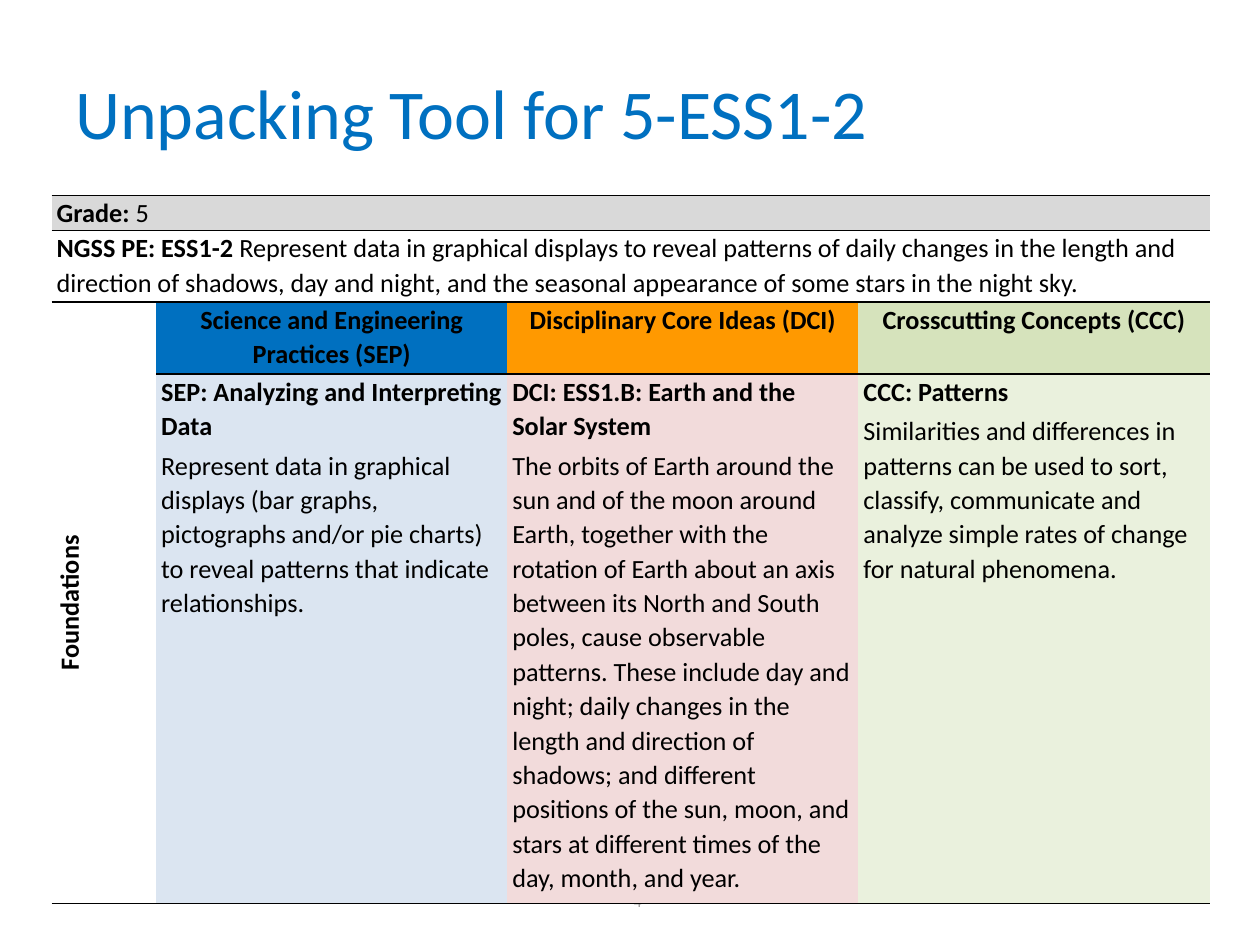
from dataclasses import dataclass

from lxml.etree import SubElement
from pptx import Presentation
from pptx.dml.color import RGBColor
from pptx.enum.text import MSO_ANCHOR, PP_ALIGN
from pptx.oxml import parse_xml
from pptx.oxml.ns import nsdecls, qn
from pptx.util import Inches, Pt


@dataclass(frozen=True)
class Theme:
    font: str = "Calibri"
    title_size: int = 40
    body_size: int = 15
    number_size: int = 9
    title: str = "0070C0"
    ink: str = "000000"
    muted: str = "8C8C8C"
    grade: str = "D9D9D9"
    no_style: str = "{2D5ABB26-0587-4C30-8999-92F81FD0307C}"


THEME = Theme()
WIDTH, HEIGHT = 10, 7.5
ROWS = (0.28, 0.57, 0.57, 4.21)
LABEL_WIDTH = 0.83

# Heading, heading fill, body title, body text, body fill
DIMENSIONS = (
    ("Science and Engineering Practices (SEP)", "0070C0",
     "SEP: Analyzing and Interpreting Data",
     "Represent data in graphical displays (bar graphs, pictographs and/or pie "
     "charts) to reveal patterns that indicate relationships.", "DBE5F1"),
    ("Disciplinary Core Ideas (DCI)", "FF9900",
     "DCI: ESS1.B: Earth and the Solar System",
     "The orbits of Earth around the sun and of the moon around Earth, together "
     "with the rotation of Earth about an axis between its North and South poles, "
     "cause observable patterns. These include day and night; daily changes in "
     "the length and direction of shadows; and different positions of the sun, "
     "moon, and stars at different times of the day, month, and year.", "F2DBDB"),
    ("Crosscutting Concepts (CCC)", "D6E3BC",
     "CCC: Patterns",
     "Similarities and differences in patterns can be used to sort, classify, "
     "communicate and analyze simple rates of change for natural phenomena.",
     "EAF1DD"),
)
PERFORMANCE = ("Represent data in graphical displays to reveal patterns of daily "
               "changes in the length and direction of shadows, day and night, and "
               "the seasonal appearance of some stars in the night sky.")


def write(tf, paragraphs, size=THEME.body_size, color=THEME.ink,
          align=PP_ALIGN.LEFT, spacing=1.07, after=0):
    """Fill a text frame; each paragraph is a list of (text, bold) runs."""
    for i, runs in enumerate(paragraphs):
        p = tf.add_paragraph() if i else tf.paragraphs[0]
        p.alignment, p.line_spacing, p.space_after = align, spacing, Pt(after)
        for text, bold in runs:
            r = p.add_run()
            r.text = text
            r.font.name, r.font.size, r.font.bold = THEME.font, Pt(size), bold
            r.font.color.rgb = RGBColor.from_string(color)


def add_text(slide, box, text, **fmt):
    sp = slide.shapes.add_textbox(*map(Inches, box))
    tf = sp.text_frame
    tf.word_wrap = True
    tf.vertical_anchor = MSO_ANCHOR.MIDDLE
    write(tf, [[(text, False)]], **fmt)


def rule_cell(cell):
    """Draw a thin line above and below the cell and none at its sides."""
    tc_pr = cell._tc.get_or_add_tcPr()
    for i, side in enumerate(("lnL", "lnR", "lnT", "lnB")):
        ln = parse_xml(f'<a:{side} {nsdecls("a")} w="{Pt(1)}"/>')
        if side in ("lnT", "lnB"):
            SubElement(SubElement(ln, qn("a:solidFill")), qn("a:srgbClr"), val=THEME.ink)
        else:
            SubElement(ln, qn("a:noFill"))
        tc_pr.insert(i, ln)


def fill_cell(cell, paragraphs, fill=None, **fmt):
    if fill:
        cell.fill.solid()
        cell.fill.fore_color.rgb = RGBColor.from_string(fill)
    else:
        cell.fill.background()
    write(cell.text_frame, paragraphs, **fmt)


def add_unpacking_table(slide, box):
    left, top, width, height = box
    frame = slide.shapes.add_table(len(ROWS), 1 + len(DIMENSIONS), *map(Inches, box))
    table = frame.table
    table._tbl.tblPr.find(qn("a:tableStyleId")).text = THEME.no_style
    table.first_row = table.horz_banding = False
    for row, share in zip(table.rows, ROWS):
        row.height = Inches(height * share / sum(ROWS))
    for i, col in enumerate(table.columns):
        col.width = Inches((width - LABEL_WIDTH) / len(DIMENSIONS) if i else LABEL_WIDTH)

    for cell in table.iter_cells():
        cell.margin_left = cell.margin_right = Inches(0.04)
        cell.margin_top = cell.margin_bottom = 0
        rule_cell(cell)

    last = len(DIMENSIONS)
    for r in (0, 1):
        table.cell(r, 0).merge(table.cell(r, last))
    table.cell(2, 0).merge(table.cell(3, 0))

    fill_cell(table.cell(0, 0), [[("Grade: ", True), ("5", False)]], THEME.grade)
    fill_cell(table.cell(1, 0), [[("NGSS PE: ESS1-2 ", True), (PERFORMANCE, False)]])
    label = table.cell(2, 0)
    fill_cell(label, [[("Foundations", True)]], align=PP_ALIGN.CENTER)
    label._tc.get_or_add_tcPr().set("vert", "vert270")

    for c, (heading, dark, title, body, light) in enumerate(DIMENSIONS, 1):
        fill_cell(table.cell(2, c), [[(heading, True)]], dark, align=PP_ALIGN.CENTER)
        fill_cell(table.cell(3, c), [[(title, True)], [(body, False)]], light, after=3)


def main():
    prs = Presentation()
    prs.slide_width, prs.slide_height = Inches(WIDTH), Inches(HEIGHT)
    slide = prs.slides.add_slide(prs.slide_layouts[6])
    add_text(slide, (2.94, 6.95, 2.25, 0.4), "4", size=THEME.number_size,
             color=THEME.muted, align=PP_ALIGN.RIGHT, spacing=1.0)
    add_text(slide, (0.05 * WIDTH, 0.04 * HEIGHT, 0.9 * WIDTH, 1.25),
             "Unpacking Tool for 5-ESS1-2", size=THEME.title_size,
             color=THEME.title, spacing=0.9)
    add_unpacking_table(slide, (0.41, 1.55, 9.19, 5.62))
    prs.save("out.pptx")


if __name__ == "__main__":
    main()
